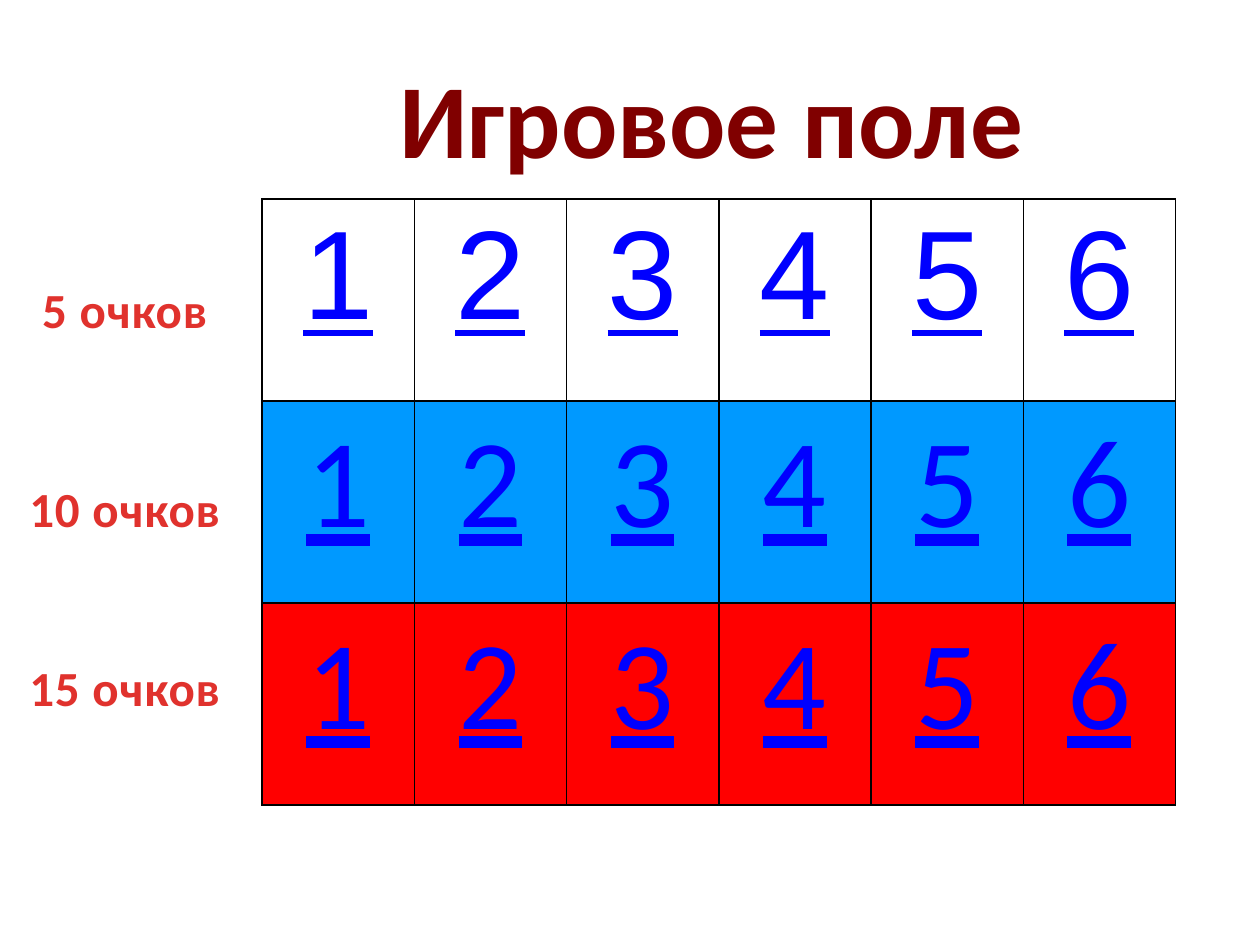
import dataclasses

import pptx
import pptx.dml.color
import pptx.enum.text
import pptx.oxml
import pptx.oxml.ns
import pptx.util

Inches = pptx.util.Inches
Align = pptx.enum.text.PP_ALIGN
Anchor = pptx.enum.text.MSO_ANCHOR


@dataclasses.dataclass(frozen=True)
class Theme:
    title: str = "800000"
    label: str = "E0322D"
    digit: str = "0000FF"
    edge: str = "000000"
    body: str = "Calibri"
    plain: str = "Arial"
    title_size: int = 60
    digit_size: int = 72
    label_size: int = 28


@dataclasses.dataclass(frozen=True)
class Level:
    label: str
    top: float
    fill: str
    font: str


THEME = Theme()
LEVELS = [
    Level("5 очков", 2.17, "FFFFFF", THEME.plain),
    Level("10 очков", 3.75, "0099FF", THEME.body),
    Level("15 очков", 5.17, "FF0000", THEME.body),
]
COLS = 6


def color(code: str) -> pptx.dml.color.RGBColor:
    return pptx.dml.color.RGBColor.from_string(code)


def style(para, name: str, size: int, code: str, bold: bool) -> None:
    para.font.name = name
    para.font.size = pptx.util.Pt(size)
    para.font.bold = bold
    para.font.color.rgb = color(code)


def add_title(slide, text: str) -> None:
    box = slide.shapes.add_textbox(Inches(0.5), Inches(0.33), Inches(8.5), Inches(1.19))
    frame = box.text_frame
    frame.word_wrap = True
    frame.vertical_anchor = Anchor.MIDDLE
    frame.margin_left = Inches(2.67)
    frame.margin_right = 0
    frame.text = text
    style(frame.paragraphs[0], THEME.body, THEME.title_size, THEME.title, True)


def add_label(slide, level: Level) -> None:
    box = slide.shapes.add_textbox(0, Inches(level.top), Inches(1.98), Inches(0.57))
    frame = box.text_frame
    frame.word_wrap = True
    frame.auto_size = pptx.enum.text.MSO_AUTO_SIZE.SHAPE_TO_FIT_TEXT
    frame.text = level.label
    para = frame.paragraphs[0]
    para.alignment = Align.CENTER
    style(para, THEME.body, THEME.label_size, THEME.label, True)
    # Letter spacing of half a point
    para.runs[0].font._element.set("spc", "50")


def add_edges(cell) -> None:
    props = cell._tc.get_or_add_tcPr()
    for side in ("lnL", "lnR", "lnT", "lnB"):
        props.append(pptx.oxml.parse_xml(
            f'<a:{side} {pptx.oxml.ns.nsdecls("a")} w="12700"><a:solidFill>'
            f'<a:srgbClr val="{THEME.edge}"/></a:solidFill></a:{side}>'))


def fill_cell(cell, digit: int, level: Level) -> None:
    add_edges(cell)
    cell.fill.solid()
    cell.fill.fore_color.rgb = color(level.fill)
    cell.text = str(digit)
    para = cell.text_frame.paragraphs[0]
    para.alignment = Align.CENTER
    style(para, level.font, THEME.digit_size, THEME.digit, False)
    para.font.underline = True


def add_board(slide) -> None:
    frame = slide.shapes.add_table(
        len(LEVELS), COLS, Inches(2.08), Inches(1.58), Inches(7.25), Inches(4.81))
    table = frame.table
    table.first_row = False
    table.horz_banding = False
    for row, level in enumerate(LEVELS):
        for col in range(COLS):
            fill_cell(table.cell(row, col), col + 1, level)


def main() -> None:
    deck = pptx.Presentation()
    deck.slide_width, deck.slide_height = Inches(10), Inches(7.5)
    slide = deck.slides.add_slide(deck.slide_layouts[6])

    # Heading and board
    add_title(slide, "Игровое поле")
    add_board(slide)

    # Points for each row
    for level in LEVELS:
        add_label(slide, level)

    deck.save("out.pptx")


if __name__ == "__main__":
    main()
